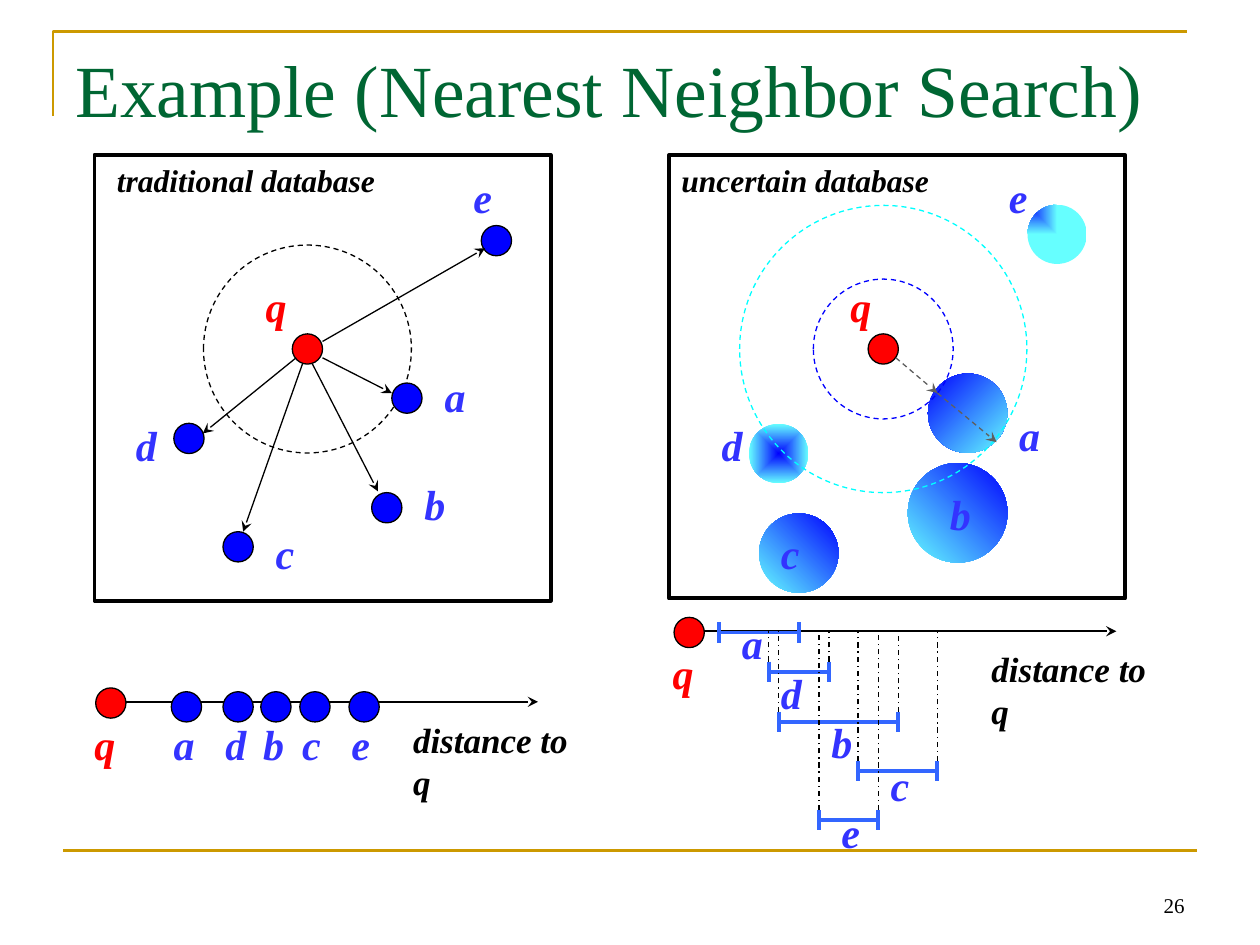
from lxml import etree
from pptx import Presentation
from pptx import util as u
from pptx.dml.color import RGBColor
from pptx.enum import dml, shapes, text
from pptx.oxml import ns

COLORS = {
    "gold": "CC9900", "green": "006633", "black": "000000", "red": "FF0000",
    "blue": "0000FF", "label": "3333FF", "interval": "3366FF",
    "light": "66FFFF", "cyan": "00FFFF", "gray": "5F5F5F",
}
FONT = "Times New Roman"
DASH = dml.MSO_LINE.DASH
DOT_SIZE = 0.24


def rgb(name):
    return RGBColor.from_string(COLORS[name])


def style_line(line, color, width, dash=None):
    line.color.rgb = rgb(color)
    line.width = u.Pt(width)
    if dash:
        line.dash_style = dash


def add_text(slide, x, y, w, h, wording, size, color="black", emphasis=True,
             align=text.PP_ALIGN.LEFT, anchor=text.MSO_ANCHOR.TOP):
    box = slide.shapes.add_textbox(u.Inches(x), u.Inches(y), u.Inches(w), u.Inches(h))
    frame = box.text_frame
    frame.word_wrap = True
    frame.vertical_anchor = anchor
    frame.text = wording
    paragraph = frame.paragraphs[0]
    paragraph.alignment = align
    font = paragraph.runs[0].font
    font.name, font.size = FONT, u.Pt(size)
    font.bold = font.italic = emphasis
    font.color.rgb = rgb(color)


def add_label(slide, x, y, letter):
    add_text(slide, x, y, 0.37, 0.5, letter, 24, "red" if letter == "q" else "label")


def add_line(parent, start, end, color, width, dash=None, arrow=False):
    line = parent.shapes.add_connector(
        shapes.MSO_CONNECTOR.STRAIGHT, *(u.Inches(v) for v in (*start, *end)))
    style_line(line.line, color, width, dash)
    properties = line.element.spPr
    if arrow:
        outline = properties.find(ns.qn("a:ln"))
        etree.SubElement(outline, ns.qn("a:tailEnd"), type="stealth")
    etree.SubElement(properties, ns.qn("a:effectLst"))


def add_preset(slide, preset, x, y, w, h):
    shape = slide.shapes.add_shape(
        preset, u.Inches(x), u.Inches(y), u.Inches(w), u.Inches(h))
    shape.shadow.inherit = False
    shape.fill.background()
    return shape


def add_circle(slide, cx, cy, size):
    return add_preset(slide, shapes.MSO_SHAPE.OVAL,
                      cx - size / 2, cy - size / 2, size, size)


def add_dot(slide, cx, cy, color="blue"):
    dot = add_circle(slide, cx, cy, DOT_SIZE)
    dot.fill.solid()
    dot.fill.fore_color.rgb = rgb(color)
    style_line(dot.line, "black", 0.75)


def add_ring(slide, cx, cy, size, color):
    style_line(add_circle(slide, cx, cy, size).line, color, 0.75, DASH)


def add_region(slide, cx, cy, size, stops, angle=None, path=None, focus=None):
    region = add_circle(slide, cx, cy, size)
    region.line.fill.background()
    region.fill.gradient()
    for stop, color in zip(region.fill.gradient_stops, stops):
        stop.color.rgb = rgb(color)
    if path is None:
        region.fill.gradient_angle = angle
        return
    gradient = region.element.spPr.find(ns.qn("a:gradFill"))
    gradient.remove(gradient.find(ns.qn("a:lin")))
    shading = etree.SubElement(gradient, ns.qn("a:path"), path=path)
    etree.SubElement(shading, ns.qn("a:fillToRect"),
                     {side: str(share * 1000) for side, share in zip("ltrb", focus)})


def add_frame(slide, x, y, h, heading, heading_dx):
    frame = add_preset(slide, shapes.MSO_SHAPE.RECTANGLE, x, y, 3.62, h)
    style_line(frame.line, "black", 2.25)
    add_text(slide, x + heading_dx, y, 2.42, 0.4, heading, 18)


def add_decor(slide, x, y, w):
    corner = slide.shapes.build_freeform(u.Inches(x), u.Inches(y + 0.67))
    corner.add_line_segments(
        [(u.Inches(x), u.Inches(y)), (u.Inches(x + w), u.Inches(y))], close=False)
    border = corner.convert_to_shape()
    border.shadow.inherit = False
    border.fill.background()
    style_line(border.line, "gold", 1.5)
    add_line(slide, (x + 0.08, y + 6.5), (x + w + 0.08, y + 6.5), "gold", 1.5)
    add_text(slide, x + 0.08, y + 0.05, w, 1.25, "Example (Nearest Neighbor Search)",
             42, "green", False)
    add_text(slide, x + 6.75, y + 6.58, 2.33, 0.5, "26", 12, emphasis=False,
             align=text.PP_ALIGN.RIGHT, anchor=text.MSO_ANCHOR.BOTTOM)


def add_traditional_panel(slide, x, y):
    add_frame(slide, x, y, 3.54, "traditional database", 0.08)
    query = (x + 1.69, y + 1.54)
    add_ring(slide, *query, 1.65, "black")
    add_dot(slide, *query, "red")
    add_label(slide, x + 1.26, y + 0.95, "q")
    objects = {
        "a": ((2.48, 1.93), (2.68, 1.66), (1.81, 1.61), (2.36, 1.89)),
        "b": ((2.32, 2.8), (2.52, 2.52), (1.73, 1.66), (2.25, 2.67)),
        "c": ((1.14, 3.11), (1.34, 2.91), (1.65, 1.66), (1.18, 2.99)),
        "d": ((0.75, 2.25), (0.23, 2.05), (1.6, 1.61), (0.86, 2.21)),
        "e": ((3.19, 0.68), (2.91, 0.08), (1.81, 1.48), (3.1, 0.74)),
    }
    for letter, points in objects.items():
        center, label, start, end = [(x + dx, y + dy) for dx, dy in points]
        add_dot(slide, *center)
        add_label(slide, *label, letter)
        add_line(slide, start, end, "black", 0.75, arrow=True)


def add_uncertain_panel(slide, x, y):
    add_frame(slide, x, y, 3.52, "uncertain database", 0)
    outward, inward = ("blue", "light"), ("light", "blue")
    add_region(slide, x + 0.87, y + 2.37, 0.47, outward, path="shape",
               focus=(50, 50, 50, 50))
    add_region(slide, x + 1.03, y + 3.16, 0.63, inward, 45)
    add_region(slide, x + 2.37, y + 2.05, 0.63, outward, 315)
    add_region(slide, x + 2.29, y + 2.84, 0.79, inward, 45)
    add_region(slide, x + 3.08, y + 0.63, 0.47, outward, path="rect",
               focus=(0, 0, 100, 100))
    query = (x + 1.7, y + 1.54)
    add_ring(slide, *query, 1.11, "blue")
    add_ring(slide, *query, 2.28, "cyan")
    add_dot(slide, *query, "red")
    near, middle, far = [(x + dx, y + dy)
                         for dx, dy in ((1.8, 1.61), (2.13, 1.89), (2.6, 2.28))]
    add_line(slide, near, middle, "gray", 0.75, DASH, True)
    add_line(slide, middle, far, "gray", 0.75, DASH, True)
    labels = {"q": (1.34, 0.95), "a": (2.68, 1.97), "b": (2.13, 2.6),
              "c": (0.79, 2.91), "d": (0.32, 2.05), "e": (2.6, 0.08)}
    for letter, (dx, dy) in labels.items():
        add_label(slide, x + dx, y + dy, letter)


def add_axis(slide, x, y):
    add_line(slide, (x, y), (x + 3.39, y), "black", 1, arrow=True)
    add_dot(slide, x, y + 0.01, "red")
    add_label(slide, x - 0.23, y + 0.08, "q")
    add_text(slide, x + 2.3, y + 0.08, 1.6, 0.43, "distance to q", 20)


def add_exact_distances(slide, x, y):
    add_axis(slide, x, y)
    distances = {"a": 0.6, "d": 1.01, "b": 1.31, "c": 1.62, "e": 2.01}
    for letter, distance in distances.items():
        add_dot(slide, x + distance, y + 0.04)
        add_label(slide, x + distance - 0.2, y + 0.08, letter)


def add_distance_ranges(slide, x, y):
    add_axis(slide, x, y)
    ranges = {
        "a": (0.24, 0.87, 0.01, 0.32, -0.16),
        "d": (0.63, 1.11, 0.32, 0.63, 0.24),
        "b": (0.71, 1.66, 0.72, 1.03, 0.63),
        "c": (1.34, 1.97, 1.11, 1.5, 0.97),
        "e": (1.03, 1.5, 1.5, 1.11, 1.34),
    }
    for letter, (low, high, depth, label_dx, label_dy) in ranges.items():
        level = y + depth
        interval = slide.shapes.add_group_shape()
        add_line(interval, (x + low, level), (x + high, level), "interval", 2.25)
        for end in (x + low, x + high):
            add_line(interval, (end, level - 0.08), (end, level + 0.08), "interval", 2.25)
            if depth > 0.08:
                add_line(slide, (end, level - 0.08), (end, y), "black", 0.75,
                         dml.MSO_LINE.DASH_DOT)
        add_label(slide, x + label_dx, y + label_dy, letter)


def main():
    deck = Presentation()
    deck.slide_width, deck.slide_height = u.Inches(10), u.Inches(7.5)
    slide = deck.slides.add_slide(deck.slide_layouts[6])
    add_decor(slide, 0.42, 0.25, 9)
    add_traditional_panel(slide, 0.75, 1.23)
    add_uncertain_panel(slide, 5.31, 1.23)
    add_exact_distances(slide, 0.88, 5.57)
    add_distance_ranges(slide, 5.47, 5.01)
    deck.save("out.pptx")


if __name__ == "__main__":
    main()
